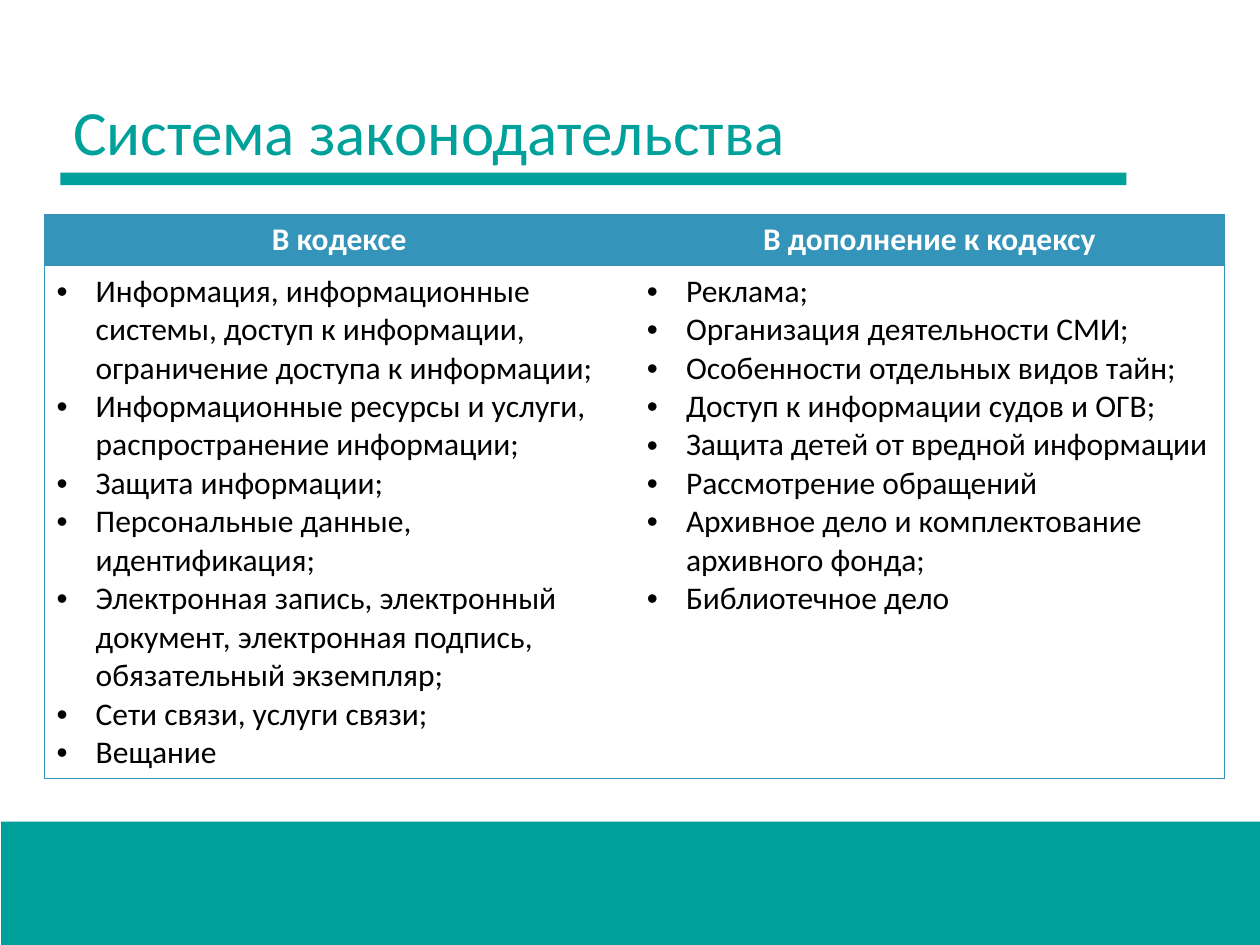
from lxml import etree
from pptx import Presentation
from pptx import util as u
from pptx.dml.color import RGBColor
from pptx.enum import shapes, text
from pptx.oxml.ns import qn

TEAL, BLUE, WHITE, BLACK = "00A19A", "3494BA", "FFFFFF", "000000"
FONT = "Calibri"
WIDTH, HEIGHT = 10, 7.5

TITLE = "Система законодательства"
COLUMNS = {
    "В кодексе": [
        "Информация, информационные системы, доступ к информации, ограничение доступа к информации;",
        "Информационные ресурсы и услуги, распространение информации;",
        "Защита информации;",
        "Персональные данные, идентификация;",
        "Электронная запись, электронный документ, электронная подпись, обязательный экземпляр;",
        "Сети связи, услуги связи;",
        "Вещание",
    ],
    "В дополнение к кодексу": [
        "Реклама;",
        "Организация деятельности СМИ;",
        "Особенности отдельных видов тайн;",
        "Доступ к информации судов и ОГВ;",
        "Защита детей от вредной информации",
        "Рассмотрение обращений",
        "Архивное дело и комплектование архивного фонда;",
        "Библиотечное дело",
    ],
}

TITLE_LEFT, TITLE_TOP, TITLE_WIDTH, TITLE_HEIGHT = 0.48, 0.21, 8.46, 1.17
FOOTER_TOP = 6.52
TABLE_LEFT, TABLE_TOP, TABLE_WIDTH = 0.35, 1.7, 9.37
ROW_HEIGHTS = (0.41, 4)
INDENT = 0.31


def color(value):
    return RGBColor.from_string(value)


def set_font(paragraph, size, value, bold=False):
    font = paragraph.font
    font.name, font.size, font.bold = FONT, u.Pt(size), bold
    font.color.rgb = color(value)


def add_bar(slide, left, top, width, height):
    bar = slide.shapes.add_shape(
        shapes.MSO_SHAPE.RECTANGLE, *map(u.Inches, (left, top, width, height)))
    bar.shadow.inherit = False
    bar.fill.solid()
    bar.fill.fore_color.rgb = color(TEAL)
    bar.line.fill.background()


def set_borders(cell, visible):
    properties = cell._tc.get_or_add_tcPr()
    for index, side in enumerate("LRTB"):
        line = etree.Element(qn(f"a:ln{side}"), w=str(u.Pt(0.5)))
        if side in visible:
            fill = etree.SubElement(line, qn("a:solidFill"))
            etree.SubElement(fill, qn("a:srgbClr"), val=BLUE)
        else:
            etree.SubElement(line, qn("a:noFill"))
        properties.insert(index, line)


def add_bullet(paragraph):
    properties = paragraph._p.get_or_add_pPr()
    properties.set("marL", str(u.Inches(INDENT)))
    properties.set("indent", str(-u.Inches(INDENT)))
    etree.SubElement(properties, qn("a:buFont"), typeface="Arial")
    etree.SubElement(properties, qn("a:buChar"), char="•")


def fill_cell(cell, lines, fill, value, header, borders):
    cell.fill.solid()
    cell.fill.fore_color.rgb = color(fill)
    set_borders(cell, borders)
    cell.text_frame.text = "\n".join(lines)
    for paragraph in cell.text_frame.paragraphs:
        if header:
            paragraph.alignment = text.PP_ALIGN.CENTER
        else:
            add_bullet(paragraph)
        set_font(paragraph, 18, value, header)


presentation = Presentation()
presentation.slide_width, presentation.slide_height = u.Inches(WIDTH), u.Inches(HEIGHT)
slide = presentation.slides.add_slide(presentation.slide_layouts[5])

# Footer band and title rule
add_bar(slide, 0.01, FOOTER_TOP, WIDTH - 0.01, HEIGHT - FOOTER_TOP)
add_bar(slide, TITLE_LEFT, 1.37, TITLE_WIDTH, 0.1)

# Title
title = slide.shapes.title
title.left, title.top, title.width, title.height = map(
    u.Inches, (TITLE_LEFT, TITLE_TOP, TITLE_WIDTH, TITLE_HEIGHT))
title.text_frame.text = TITLE
title.text_frame.vertical_anchor = text.MSO_ANCHOR.BOTTOM
heading = title.text_frame.paragraphs[0]
heading.alignment = text.PP_ALIGN.LEFT
heading.line_spacing = 0.8
set_font(heading, 36, TEAL)

# Table of two lists
table = slide.shapes.add_table(
    len(ROW_HEIGHTS), len(COLUMNS),
    *map(u.Inches, (TABLE_LEFT, TABLE_TOP, TABLE_WIDTH, sum(ROW_HEIGHTS)))).table
table.horz_banding = False
for row, height in zip(table.rows, ROW_HEIGHTS):
    row.height = u.Inches(height)
for column, (name, items) in enumerate(COLUMNS.items()):
    outer = "LR"[column]
    fill_cell(table.cell(0, column), [name], BLUE, WHITE, True, outer + "TB")
    fill_cell(table.cell(1, column), items, WHITE, BLACK, False, outer + "TB")

presentation.save("out.pptx")
